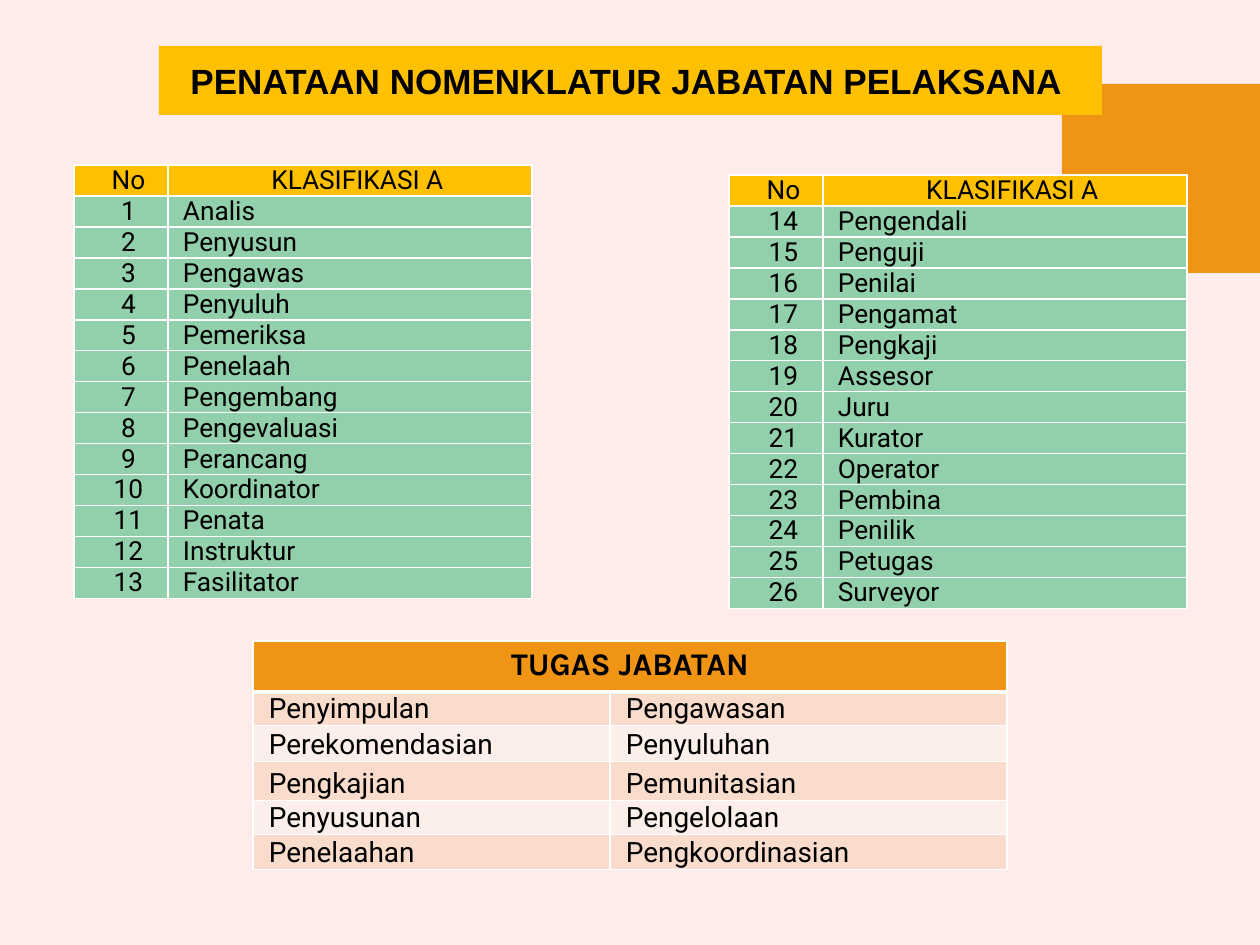
"""Build the slide on the naming of executive positions."""
import dataclasses

import lxml.etree
import pptx
import pptx.dml.color
import pptx.enum.shapes
import pptx.enum.text
import pptx.oxml.ns
import pptx.util


@dataclasses.dataclass(frozen=True)
class Theme:
    page: str = "FEECEA"
    orange: str = "F09415"
    yellow: str = "FFC000"
    green: str = "92D0AB"
    bands: tuple = ("F9DCCC", "FCEEE8")
    border: str = "FFFFFF"
    text: str = "000000"
    title_size: int = 20
    heading_size: int = 18
    task_size: int = 16
    class_size: int = 15


THEME = Theme()
PX = 914400 // 126
COLOUR = pptx.dml.color.RGBColor.from_string
ANCHOR = pptx.enum.text.MSO_ANCHOR
ALIGN = pptx.enum.text.PP_ALIGN


def write_text(frame, text, *, size, font="Roboto", bold=False, align=ALIGN.LEFT, indent=0):
    para = frame.paragraphs[0]
    para.alignment = align
    para._p.get_or_add_pPr().set("marL", str(indent * PX))
    span = para.add_run()
    span.text = text
    span.font.size = pptx.util.Pt(size)
    span.font.name = font
    span.font.bold = bold
    span.font.color.rgb = COLOUR(THEME.text)


def style_cell(cell, fill, inset, anchor=ANCHOR.BOTTOM, bottom_line=1):
    cell.fill.solid()
    cell.fill.fore_color.rgb = COLOUR(fill)
    cell.vertical_anchor = anchor
    cell.margin_left = cell.margin_right = inset[0] * PX
    cell.margin_top, cell.margin_bottom = inset[1] * PX, inset[2] * PX
    properties = cell._tc.get_or_add_tcPr()
    for position, side in enumerate(("lnL", "lnR", "lnT", "lnB")):
        width = bottom_line if side == "lnB" else 1
        line = lxml.etree.Element(pptx.oxml.ns.qn(f"a:{side}"), w=str(pptx.util.Pt(width)))
        solid = lxml.etree.SubElement(line, pptx.oxml.ns.qn("a:solidFill"))
        lxml.etree.SubElement(solid, pptx.oxml.ns.qn("a:srgbClr"), val=THEME.border)
        properties.insert(position, line)


deck = pptx.Presentation()
deck.slide_width, deck.slide_height = 1260 * PX, 945 * PX
page = deck.slides.add_slide(deck.slide_layouts[6])
page.background.fill.solid()
page.background.fill.fore_color.rgb = COLOUR(THEME.page)

boxes = []
for bounds, fill in (((1062, 84, 198, 189), THEME.orange), ((159, 46, 943, 69), THEME.yellow)):
    box = page.shapes.add_shape(
        pptx.enum.shapes.MSO_SHAPE.RECTANGLE, *(length * PX for length in bounds)
    )
    box.shadow.inherit = False
    box.fill.solid()
    box.fill.fore_color.rgb = COLOUR(fill)
    box.line.fill.background()
    boxes.append(box)
title = boxes[1].text_frame
title.word_wrap = True
title.vertical_anchor = ANCHOR.MIDDLE
write_text(title, "PENATAAN NOMENKLATUR JABATAN PELAKSANA ",
           size=THEME.title_size, font="Arial", bold=True, align=ALIGN.CENTER)

positions = (
    "Analis", "Penyusun", "Pengawas", "Penyuluh", "Pemeriksa", "Penelaah", "Pengembang",
    "Pengevaluasi", "Perancang", "Koordinator", "Penata", "Instruktur", "Fasilitator",
    "Pengendali", "Penguji", "Penilai", "Pengamat", "Pengkaji", "Assesor", "Juru",
    "Kurator", "Operator", "Pembina", "Penilik", "Petugas", "Surveyor",
)
numbered = [(str(number), name) for number, name in enumerate(positions, 1)]
classes = (
    (74, 165, numbered[:13]),
    (729, 175, numbered[13:]),
)
tasks = (
    ("Penyimpulan", "Pengawasan"),
    ("Perekomendasian", "Penyuluhan"),
    ("Pengkajian", "Pemunitasian"),
    ("Penyusunan", "Pengelolaan"),
    ("Penelaahan", "Pengkoordinasian"),
)

grids = []
for left, top, entries in classes:
    rows = [("No", "KLASIFIKASI A"), *entries]
    grids.append((left, top, (94, 364), [31] * len(rows), rows))
grids.append((253, 641, (357, 397), (51, 33, 36, 39, 34, 35), [("TUGAS JABATAN", ""), *tasks]))

for left, top, widths, heights, rows in grids:
    is_tasks = rows[0][0] == "TUGAS JABATAN"
    frame = page.shapes.add_table(
        len(rows), 2, left * PX, top * PX, sum(widths) * PX, sum(heights) * PX
    )
    table = frame.table
    table.first_row = table.horz_banding = False
    for column, width in zip(table.columns, widths):
        column.width = width * PX
    for row, height in zip(table.rows, heights):
        row.height = height * PX
    if is_tasks:
        table.cell(0, 0).merge(table.cell(0, 1))
    for r, row in enumerate(rows):
        for c, text in enumerate(row):
            cell = table.cell(r, c)
            if is_tasks and r == 0:
                style_cell(cell, THEME.orange, (13, 6, 6), ANCHOR.TOP, bottom_line=3)
                if text:
                    write_text(cell.text_frame, text, size=THEME.heading_size,
                               font="Karla", bold=True, align=ALIGN.CENTER)
            elif is_tasks:
                style_cell(cell, THEME.bands[(r - 1) % 2], (1, 1, 0))
                write_text(cell.text_frame, text, size=THEME.task_size, indent=15)
            else:
                style_cell(cell, THEME.green if r else THEME.yellow, (0, 0, 0))
                write_text(cell.text_frame, text, size=THEME.class_size, indent=15,
                           align=ALIGN.LEFT if r and c else ALIGN.CENTER)

deck.save("out.pptx")
